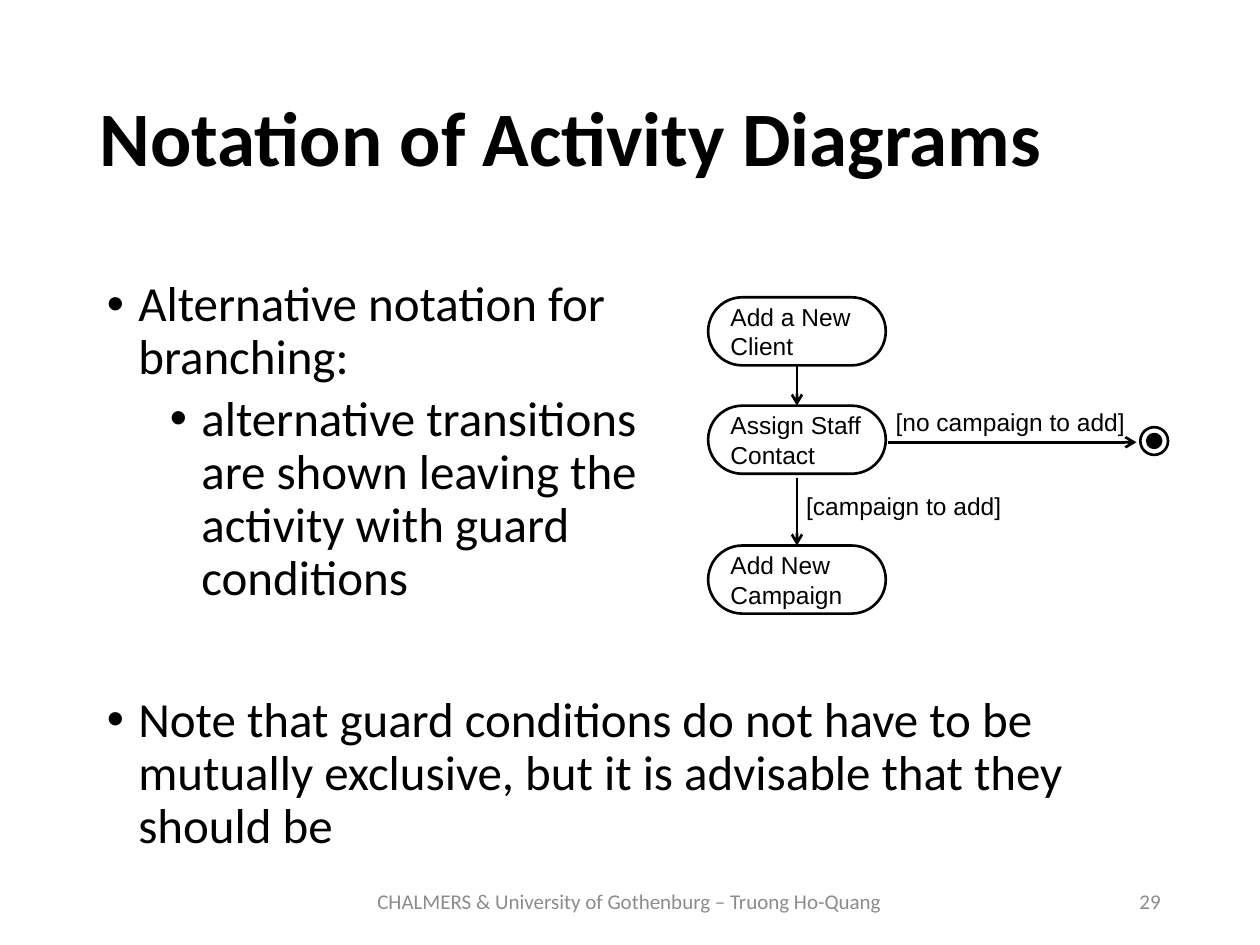
from lxml import etree
from pptx import Presentation
from pptx.dml.color import RGBColor
from pptx.enum.shapes import MSO_CONNECTOR, MSO_SHAPE
from pptx.enum.text import MSO_ANCHOR, PP_ALIGN
from pptx.oxml.ns import qn
from pptx.util import Inches, Pt

BLACK = RGBColor(0x00, 0x00, 0x00)
WHITE = RGBColor(0xFF, 0xFF, 0xFF)
GRAY = RGBColor(0x8C, 0x8C, 0x8C)
STRAIGHT = MSO_CONNECTOR.STRAIGHT
ROUNDED = MSO_SHAPE.ROUNDED_RECTANGLE
OVAL = MSO_SHAPE.OVAL
TOP, MIDDLE = MSO_ANCHOR.TOP, MSO_ANCHOR.MIDDLE
LEFT, CENTER, RIGHT = PP_ALIGN.LEFT, PP_ALIGN.CENTER, PP_ALIGN.RIGHT
LINE_WIDTH = Pt(1.5)

TITLE_FONT = {"name": "Calibri", "size": Pt(44), "bold": True}
BODY_FONT = {"name": "Calibri", "size": Pt(28)}
FOOTER_FONT = {"name": "Calibri", "size": Pt(12)}
DIAGRAM_FONT = {"name": "Arial", "size": Pt(14)}

BULLETS = [
    ("Alternative notation for\vbranching:", 0, 0.25, 0),
    ("alternative transitions\vare shown leaving the\vactivity with guard\vconditions", 1, 0.75, 5),
    ("Note that guard conditions do not have to be mutually exclusive, "
     "but it is advisable that they should be", 0, 0.25, 51),
]
ACTIVITIES = [
    ("Add a New\vClient", 0),
    ("Assign Staff\vContact", 0.86),
    ("Add New\vCampaign", 1.97),
]


def format_paragraph(paragraph, font_values, color, **paragraph_values):
    """Apply paragraph and font values."""
    for name, value in paragraph_values.items():
        setattr(paragraph, name, value)
    for name, value in font_values.items():
        setattr(paragraph.font, name, value)
    paragraph.font.color.rgb = color


def add_text(slide, box, text, font_values, color=BLACK, anchor=MIDDLE, **paragraph_values):
    """Add a wrapping one-paragraph text box."""
    shape = slide.shapes.add_textbox(*map(Inches, box))
    frame = shape.text_frame
    frame.word_wrap = True
    frame.vertical_anchor = anchor
    frame.text = text
    format_paragraph(frame.paragraphs[0], font_values, color, **paragraph_values)


def add_body(slide, box):
    """Add the bulleted text in its box."""
    frame = slide.shapes.add_textbox(*map(Inches, box)).text_frame
    frame.word_wrap = True
    for index, (text, level, margin, space) in enumerate(BULLETS):
        paragraph = frame.add_paragraph() if index else frame.paragraphs[0]
        paragraph.text = text
        properties = paragraph._p.get_or_add_pPr()
        properties.set("marL", str(Inches(margin)))
        properties.set("indent", str(Inches(-0.25)))
        etree.SubElement(properties, qn("a:buFont"), typeface="Arial")
        etree.SubElement(properties, qn("a:buChar"), char="•")
        format_paragraph(paragraph, BODY_FONT, BLACK, level=level,
                         line_spacing=0.9, space_before=Pt(space))


def add_outlined(slide, kind, box, fill):
    """Add a black-outlined shape."""
    shape = slide.shapes.add_shape(kind, *map(Inches, box))
    shape.shadow.inherit = False
    shape.fill.solid()
    shape.fill.fore_color.rgb = fill
    shape.line.color.rgb = BLACK
    shape.line.width = LINE_WIDTH
    return shape


def add_activity(slide, box, text):
    """Add a rounded activity with its name."""
    shape = add_outlined(slide, ROUNDED, box, WHITE)
    shape.adjustments[0] = 0.5
    frame = shape.text_frame
    frame.word_wrap = False
    frame.vertical_anchor = MIDDLE
    frame.text = text
    format_paragraph(frame.paragraphs[0], DIAGRAM_FONT, BLACK, alignment=LEFT)
    return shape


def add_arrow(slide, start, end):
    """Add a transition with an open arrowhead."""
    connector = slide.shapes.add_connector(STRAIGHT, *map(Inches, start + end))
    connector.line.color.rgb = BLACK
    connector.line.width = LINE_WIDTH
    etree.SubElement(connector.line._get_or_add_ln(), qn("a:tailEnd"), type="arrow")
    etree.SubElement(connector._element.spPr, qn("a:effectLst"))
    return connector


def add_final_state(slide, center_x, center_y):
    """Add the bull's-eye of the final state."""
    for diameter, fill in ((0.22, WHITE), (0.11, BLACK)):
        radius = diameter / 2
        add_outlined(slide, OVAL, (center_x - radius, center_y - radius, diameter, diameter), fill)


def add_diagram(slide, box):
    """Add the activity diagram in its box."""
    left, top, width, _ = box
    activity_width, activity_height = 1.41, 0.54
    center = left + activity_width / 2
    add_text(slide, (left + 0.68, top + 1.49, 2.07, 0.33), "[campaign to add]", DIAGRAM_FONT, anchor=TOP)
    add_text(slide, (left + 1.39, top + 0.82, 2.3, 0.33), "[no campaign to add]", DIAGRAM_FONT, anchor=TOP)
    client, staff, campaign = [
        add_activity(slide, (left, top + offset, activity_width, activity_height), text)
        for text, offset in ACTIVITIES
    ]
    first = add_arrow(slide, (center, top + 0.54), (center, top + 0.86))
    first.begin_connect(client, 2)
    first.end_connect(staff, 0)
    second = add_arrow(slide, (center, top + 1.43), (center, top + 1.97))
    second.end_connect(campaign, 0)
    add_arrow(slide, (left + 1.43, top + 1.15), (left + width - 0.25, top + 1.15))
    add_final_state(slide, left + width - 0.11, top + 1.14)


def add_footer(slide, box):
    """Add the centred footer and the page number."""
    left, top, width, height = box
    add_text(slide, (left, top, 4.55, height), "CHALMERS & University of Gothenburg – Truong Ho-Quang",
             FOOTER_FONT, GRAY, alignment=CENTER)
    add_text(slide, (left + width - 2.25, top, 2.25, height), "29", FOOTER_FONT, GRAY, alignment=RIGHT)


def main():
    """Build and save the slide."""
    presentation = Presentation()
    presentation.slide_width = Inches(10)
    presentation.slide_height = Inches(7.5)
    slide = presentation.slides.add_slide(presentation.slide_layouts[6])
    add_text(slide, (0.69, 0.4, 8.62, 1.45), "Notation of Activity Diagrams", TITLE_FONT, line_spacing=0.9)
    add_footer(slide, (2.72, 6.95, 6.59, 0.4))
    add_body(slide, (0.75, 2.17, 8.5, 4.5))
    add_diagram(slide, (5.62, 2.36, 3.65, 2.51))
    presentation.save("out.pptx")


if __name__ == "__main__":
    main()
